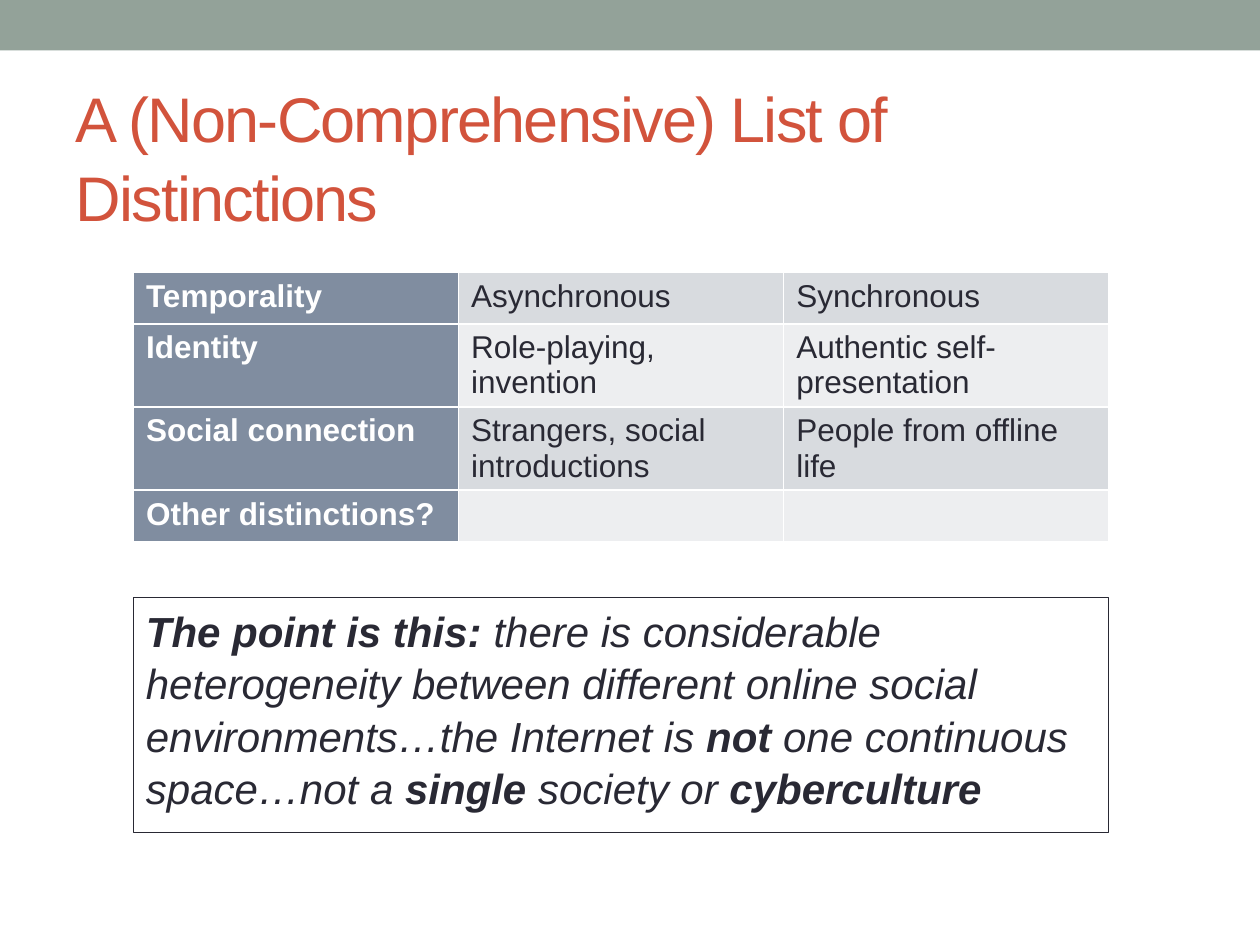
from lxml.etree import SubElement
from pptx import Presentation
from pptx.dml.color import RGBColor
from pptx.enum.shapes import MSO_SHAPE as Shape
from pptx.enum.text import MSO_ANCHOR as Anchor, PP_ALIGN as Align
from pptx.oxml.ns import qn
from pptx.util import Inches, Pt

COLORS = {
    "bar": "93A299",
    "title": "D2533C",
    "text": "292934",
    "white": "FFFFFF",
    "label": "808DA0",
    "odd_row": "D8DBDF",
    "even_row": "EDEEF0",
}
FONT = "Arial"
CONTENT_LEFT = 1.06
CONTENT_WIDTH = 7.74

DISTINCTIONS = [
    ("Temporality", "Asynchronous", "Synchronous"),
    ("Identity", "Role-playing, invention", "Authentic self-presentation"),
    ("Social connection", "Strangers, social introductions", "People from offline life"),
    ("Other distinctions?", "", ""),
]
POINT = [
    ("The point is this: ", True),
    ("there is considerable heterogeneity between different online social "
     "environments…the Internet is ", False),
    ("not ", True),
    ("one continuous space…not a ", False),
    ("single ", True),
    ("society or ", False),
    ("cyberculture", True),
]


def color(name):
    return RGBColor.from_string(COLORS[name])


def paint(target, name):
    target.fill.solid()
    target.fill.fore_color.rgb = color(name)


def style_span(span, size, name, bold=False, italic=False):
    span.font.name = FONT
    span.font.size = Pt(size)
    span.font.color.rgb = color(name)
    span.font.bold = bold
    span.font.italic = italic


def add_rectangle(page, left, top, width, height, fill):
    box = page.shapes.add_shape(
        Shape.RECTANGLE, Inches(left), Inches(top), Inches(width), Inches(height))
    box.shadow.inherit = False
    paint(box, fill)
    box.line.fill.background()
    return box


def set_title(page, text):
    title = page.shapes.title
    title.left, title.top = Inches(0.5), Inches(0.58)
    title.width, title.height = Inches(9), Inches(1.31)
    frame = title.text_frame
    frame.text = text
    frame.word_wrap = True
    frame.vertical_anchor = Anchor.MIDDLE
    para = frame.paragraphs[0]
    para.alignment = Align.LEFT
    para.line_spacing = 1.04
    span = para.runs[0]
    style_span(span, 36, "title")
    span.font._element.set("spc", "-100")


def add_distinctions(page, rows):
    row_height = 0.41
    table = page.shapes.add_table(
        len(rows), len(rows[0]), Inches(CONTENT_LEFT), Inches(2.16),
        Inches(CONTENT_WIDTH), Inches(row_height * len(rows))).table
    table.first_row = False
    table.horz_banding = False
    for row_index, row in enumerate(rows):
        band = "even_row" if row_index % 2 else "odd_row"
        for column_index, text in enumerate(row):
            is_label = column_index == 0
            cell = table.cell(row_index, column_index)
            paint(cell, "label" if is_label else band)
            cell.text_frame.text = text
            for span in cell.text_frame.paragraphs[0].runs:
                style_span(span, 18, "white" if is_label else "text", bold=is_label)


def add_point(page, pieces):
    box = add_rectangle(page, CONTENT_LEFT, 4.74, CONTENT_WIDTH, 1.87, "white")
    fill_color = box.fill._xPr.find(qn("a:solidFill"))[0]
    SubElement(fill_color, qn("a:alpha"), val="83000")
    box.line.color.rgb = color("text")
    box.line.width = Pt(0.75)
    frame = box.text_frame
    frame.word_wrap = True
    frame.vertical_anchor = Anchor.TOP
    para = frame.paragraphs[0]
    para.alignment = Align.LEFT
    para.line_spacing = 1.04
    for text, bold in pieces:
        span = para.add_run()
        span.text = text
        style_span(span, 24, "text", bold=bold, italic=True)


def main():
    deck = Presentation()
    deck.slide_width, deck.slide_height = Inches(10), Inches(7.5)
    page = deck.slides.add_slide(deck.slide_layouts.get_by_name("Title Only"))
    add_rectangle(page, 0, 0, 10, 0.4, "bar")
    set_title(page, "A (Non-Comprehensive) List of Distinctions")
    add_distinctions(page, DISTINCTIONS)
    add_point(page, POINT)
    deck.save("out.pptx")


if __name__ == "__main__":
    main()
